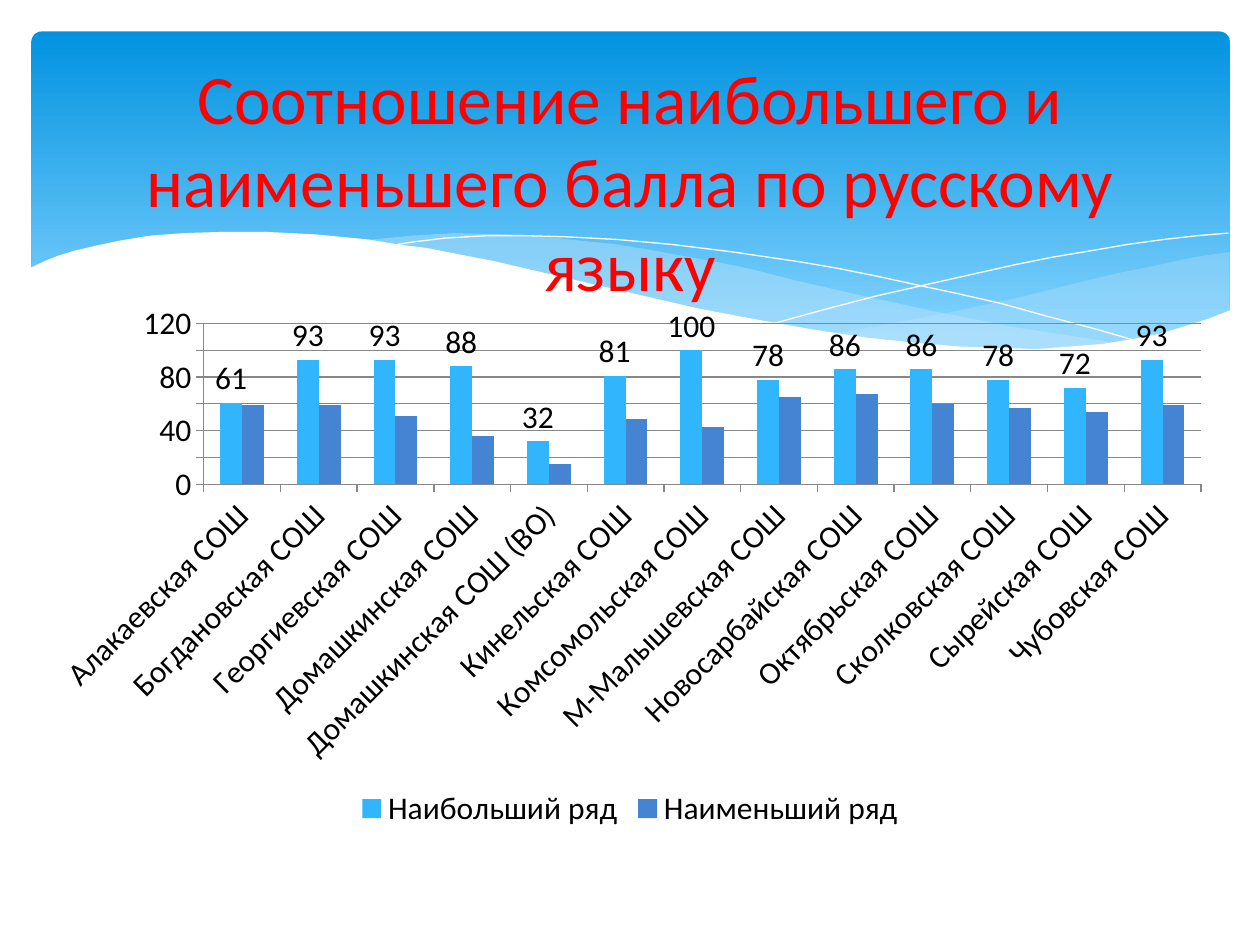
import pptx
import pptx.chart.data
import pptx.dml.color
import pptx.enum.chart
import pptx.enum.shapes
import pptx.enum.text
import pptx.oxml
import pptx.util
from dataclasses import dataclass

Inches = pptx.util.Inches
Pt = pptx.util.Pt
rgb = pptx.dml.color.RGBColor.from_string
C = pptx.enum.chart


@dataclass(frozen=True)
class Theme:
    font: str = "Calibri"
    title: float = 39.6
    body: int = 18
    red: str = "FF0000"
    black: str = "000000"
    white: str = "FFFFFF"
    mist: str = "C6E7FC"
    grid: str = "878787"
    sky: tuple = ((0, "0293E0"), (0.9, "83D3FE"))
    bars: tuple = ("31B6FD", "4584D3")


def apply(item, **values):
    for name, value in values.items():
        setattr(item, name, value)


class Page:
    def __init__(self, deck, theme):
        self.theme = theme
        self.slide = deck.slides.add_slide(deck.slide_layouts[6])
        self.shapes = self.slide.shapes

    def style(self, font, size, color):
        apply(font, name=self.theme.font, size=Pt(size), bold=False)
        font.color.rgb = rgb(color)

    def panel(self, box, radius):
        shape = self.shapes.add_shape(
            pptx.enum.shapes.MSO_SHAPE.ROUNDED_RECTANGLE, *map(Inches, box))
        shape.adjustments[0] = radius
        shape.shadow.inherit = False
        shape.line.fill.background()
        shape.fill.gradient()
        shape.fill.gradient_angle = 270
        for stop, (place, color) in zip(shape.fill.gradient_stops, self.theme.sky):
            stop.position = place
            stop.color.rgb = rgb(color)

    def wave(self, points, fill=None, alpha=100):
        """Draw a closed filled shape, or an open white hairline without fill."""
        first, *rest = [(round(x * 100), round(y * 100)) for x, y in points]
        pen = self.shapes.build_freeform(*first, scale=Inches(0.01))
        pen.add_line_segments(rest, close=fill is not None)
        shape = pen.convert_to_shape()
        shape.shadow.inherit = False
        if fill is None:
            shape.fill.background()
            shape.line.color.rgb = rgb(self.theme.white)
            shape.line.width = Pt(0)
            return
        shape.line.fill.background()
        shape.fill.solid()
        shape.fill.fore_color.rgb = rgb(fill)
        if alpha < 100:
            tone = shape.fill._xPr.find(".//" + pptx.oxml.ns.qn("a:srgbClr"))
            node = pptx.oxml.xmlchemy.OxmlElement("a:alpha")
            node.set("val", str(alpha * 1000))
            tone.append(node)

    def chart(self, box, cats, rows):
        data = pptx.chart.data.CategoryChartData()
        data.categories = cats
        for name, values in rows.items():
            data.add_series(name, values)
        chart = self.shapes.add_chart(
            C.XL_CHART_TYPE.COLUMN_CLUSTERED, *map(Inches, box), data).chart
        self.style(chart.font, self.theme.body, self.theme.black)
        apply(chart, has_title=False, has_legend=True)
        apply(chart.legend, position=C.XL_LEGEND_POSITION.BOTTOM,
              include_in_layout=False)
        plot = chart.plots[0]
        apply(plot, gap_width=150, overlap=0, vary_by_categories=False)
        for series, color in zip(plot.series, self.theme.bars):
            series.format.fill.solid()
            series.format.fill.fore_color.rgb = rgb(color)
        apply(plot.series[0].data_labels, show_value=True,
              position=C.XL_LABEL_POSITION.OUTSIDE_END)
        chart.value_axis.has_major_gridlines = True
        lines = [chart.value_axis.major_gridlines.format.line]
        for axis in (chart.category_axis, chart.value_axis):
            apply(axis, major_tick_mark=C.XL_TICK_MARK.OUTSIDE,
                  minor_tick_mark=C.XL_TICK_MARK.NONE)
            lines.append(axis.format.line)
        for line in lines:
            line.color.rgb = rgb(self.theme.grid)
            line.width = Pt(0.75)

    def title(self, box, text):
        frame = self.shapes.add_textbox(*map(Inches, box)).text_frame
        apply(frame, word_wrap=True,
              vertical_anchor=pptx.enum.text.MSO_ANCHOR.MIDDLE)
        para = frame.paragraphs[0]
        para.alignment = pptx.enum.text.PP_ALIGN.CENTER
        run = para.add_run()
        run.text = text
        self.style(run.font, self.theme.title, self.theme.red)


RIGHT = [
    (9.76, 2), (9.48, 2.04), (9.21, 2.1), (8.91, 2.16), (8.61, 2.23),
    (8.05, 2.37), (7.53, 2.48), (7.06, 2.57), (6.61, 2.65), (6.91, 2.69),
    (7.19, 2.72), (7.45, 2.75), (7.69, 2.77), (8.03, 2.78), (8.35, 2.77),
    (8.63, 2.75), (8.89, 2.72), (9.13, 2.67), (9.35, 2.62), (9.49, 2.57),
    (9.63, 2.52), (9.76, 2.47)]
MIDDLE = [
    (8.93, 2.73), (8.66, 2.69), (8.07, 2.6), (7.41, 2.47), (6.68, 2.31),
    (6.29, 2.22), (5.98, 2.14), (5.69, 2.08), (5.41, 2.03), (5.14, 1.98),
    (4.89, 1.94), (4.42, 1.89), (3.99, 1.86), (3.61, 1.85), (3.28, 1.87),
    (2.86, 1.91), (3.23, 1.96), (3.62, 2.03), (4.04, 2.11), (4.49, 2.22),
    (4.91, 2.32), (5.3, 2.4), (5.66, 2.48), (6.01, 2.55), (6.34, 2.61),
    (6.65, 2.66), (6.95, 2.7), (7.22, 2.74), (7.48, 2.76), (7.85, 2.78),
    (8.28, 2.78), (8.57, 2.77), (8.76, 2.75)]
FALL = [
    (3.09, 1.95), (3.28, 1.92), (3.53, 1.89), (3.87, 1.87), (4.16, 1.87),
    (4.5, 1.88), (4.89, 1.9), (5.33, 1.94), (5.82, 2), (6.36, 2.08),
    (6.65, 2.13), (6.95, 2.19), (7.27, 2.26), (7.6, 2.33), (7.95, 2.41),
    (8.31, 2.51), (8.69, 2.61), (9.07, 2.72)]
RISE = [
    (6.13, 2.57), (6.53, 2.46), (6.95, 2.35), (7.48, 2.23), (8.06, 2.1),
    (8.36, 2.04), (8.66, 1.99), (8.95, 1.94), (9.24, 1.9), (9.51, 1.87),
    (9.75, 1.85)]
FRONT = [
    (9.77, 2.46), (9.59, 2.53), (9.4, 2.59), (9.2, 2.65), (8.99, 2.69),
    (8.75, 2.73), (8.5, 2.75), (8.23, 2.77), (7.93, 2.76), (7.61, 2.75),
    (7.26, 2.72), (6.88, 2.68), (6.48, 2.62), (6.03, 2.54), (5.55, 2.45),
    (5.03, 2.33), (4.47, 2.2), (3.91, 2.07), (3.65, 2.02), (3.4, 1.97),
    (3.16, 1.94), (2.92, 1.9), (2.5, 1.86), (2.11, 1.84), (1.77, 1.84),
    (1.46, 1.85), (1.19, 1.87), (0.95, 1.91), (0.76, 1.95), (0.59, 1.99),
    (0.46, 2.03), (0.36, 2.07), (0.23, 2.13), (0.23, 3.29), (9.77, 3.29)]

TOWNS = ["Алакаевская", "Богдановская", "Георгиевская", "Домашкинская",
         "Домашкинская", "Кинельская", "Комсомольская", "М-Малышевская",
         "Новосарбайская", "Октябрьская", "Сколковская", "Сырейская",
         "Чубовская"]
SCHOOLS = [f"{town} СОШ" for town in TOWNS]
SCHOOLS[4] += " (ВО)"
SCORES = {
    "Наибольший ряд": [61, 93, 93, 88, 32, 81, 100, 78, 86, 86, 78, 72, 93],
    "Наименьший ряд": [59, 59, 51, 36, 15, 49, 43, 65, 67, 60, 57, 54, 59]}


def main():
    deck = pptx.Presentation()
    apply(deck, slide_width=Inches(10), slide_height=Inches(7.5))
    theme = Theme()
    page = Page(deck, theme)
    page.panel((0.25, 0.25, 9.51, 2.7), 0.03)
    page.wave(RIGHT, theme.mist, 29)
    page.wave(MIDDLE, theme.mist, 40)
    page.wave(FALL)
    page.wave(RISE)
    page.wave(FRONT, theme.white)
    page.chart((0.28, 2.33, 9.44, 4.29), SCHOOLS, SCORES)
    page.title((0.5, 0.37, 9, 2.12),
               "Соотношение наибольшего и наименьшего балла по русскому языку")
    deck.save("out.pptx")


if __name__ == "__main__":
    main()
